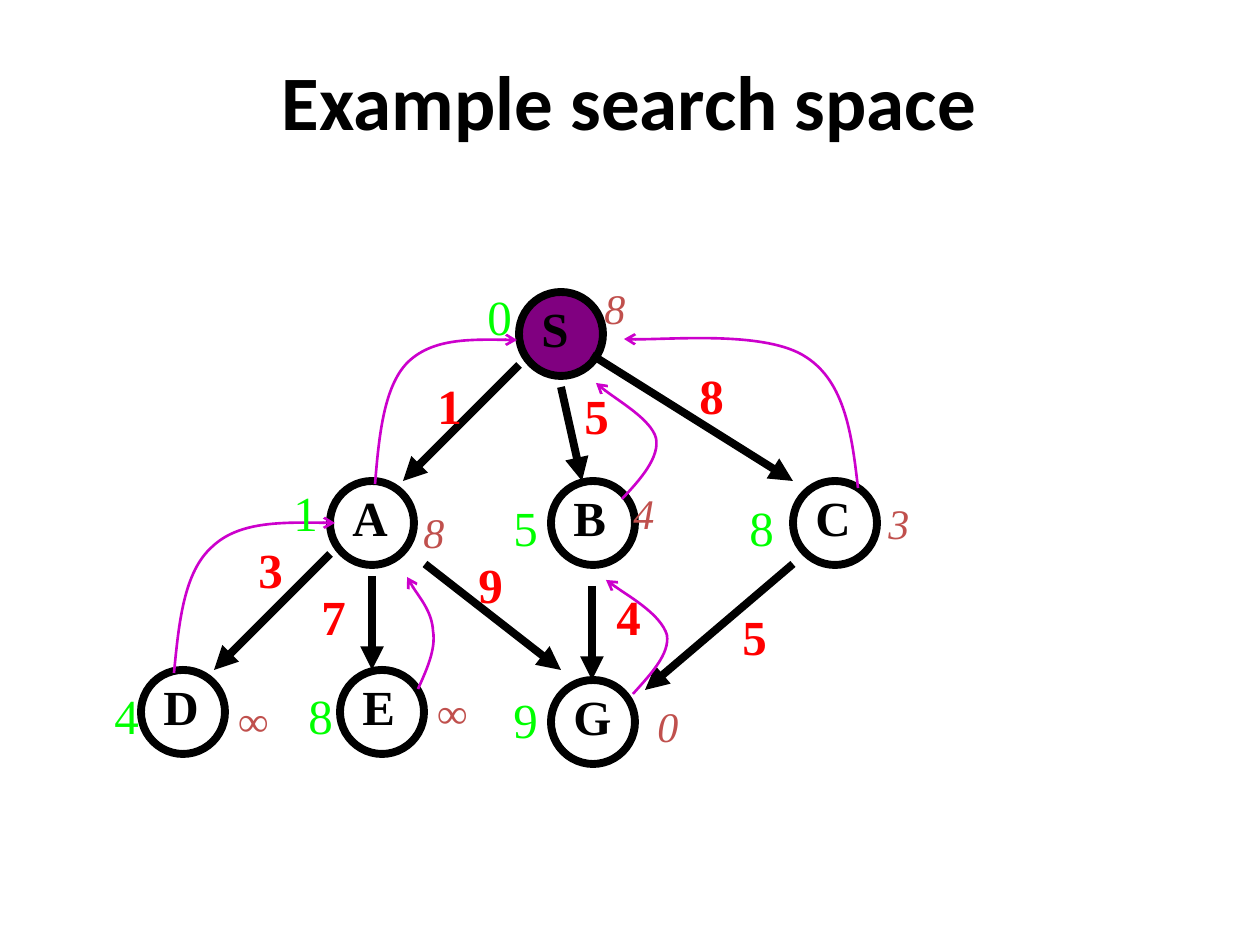
from dataclasses import dataclass

from lxml import etree
from pptx import Presentation
from pptx.dml.color import RGBColor
from pptx.enum.shapes import MSO_CONNECTOR, MSO_SHAPE
from pptx.enum.text import MSO_ANCHOR, MSO_AUTO_SIZE, PP_ALIGN
from pptx.oxml.ns import qn
from pptx.util import Emu, Pt

ELLIPSE, STRAIGHT = MSO_SHAPE.OVAL, MSO_CONNECTOR.STRAIGHT
MIDDLE, CENTER = MSO_ANCHOR.MIDDLE, PP_ALIGN.CENTER
GROW = MSO_AUTO_SIZE.SHAPE_TO_FIT_TEXT
PX_PER_INCH = 126
NODE = 84


@dataclass(frozen=True)
class TextStyle:
    size: int
    color: str
    bold: bool = False
    italic: bool = False
    font: str = "Times New Roman"


@dataclass(frozen=True)
class Theme:
    title = TextStyle(44, "000000", bold=True, font="Calibri")
    node = TextStyle(28, "000000", bold=True)
    edge_cost = TextStyle(28, "FF0000", bold=True)
    path_cost = TextStyle(28, "00FF00")
    heuristic = TextStyle(24, "C0504D", italic=True)
    ink = "000000"
    start_fill = "800080"
    back_pointer = "CC00CC"
    thick = 4.5
    thin = 1.5


THEME = Theme()

# letter, position, letter box width, path cost and its offset, heuristic and its offset
NODES = [
    ("S", (419, 22), 53, "0", (-44, -12), "8", (73, -16)),
    ("A", (230, 211), 60, "1", (-49, -5), "8", (81, 19)),
    ("B", (451, 211), 58, "5", (-50, 10), "4", (70, 0)),
    ("C", (693, 211), 60, "8", (-56, 10), "3", (83, 10)),
    ("D", (41, 400), 60, "4", (-39, 9), "∞", (85, 18)),
    ("E", (240, 400), 58, "8", (-44, 9), "∞", (85, 10)),
    ("G", (451, 410), 63, "9", (-50, 3), "0", (94, 14)),
]

# from, to, cost, cost position
EDGES = [
    ((419, 95), (303, 211), "1", (325, 99)),
    ((461, 117), (482, 211), "5", (472, 109)),
    ((492, 85), (693, 211), "8", (587, 89)),
    ((230, 284), (114, 400), "3", (146, 263)),
    ((272, 306), (272, 400), "7", (209, 310)),
    ((325, 294), (461, 400), "9", (366, 278)),
    ((492, 316), (492, 410), "4", (504, 310)),
    ((693, 294), (545, 420), "5", (630, 330)),
]

# start point, then two cubic Bézier segments of three points each
BACK_POINTERS = [
    [(275, 214), (279, 165), (284, 117), (307, 93), (331, 69), (374, 69), (417, 70)],
    [(74, 403), (79, 352), (84, 302), (112, 277), (138, 252), (186, 252), (235, 253)],
    [(318, 419), (327, 399), (336, 379), (333, 361), (332, 342), (311, 316), (307, 307)],
    [(533, 424), (551, 404), (570, 384), (567, 365), (561, 345), (516, 318), (506, 310)],
    [(522, 229), (541, 209), (560, 187), (556, 168), (551, 150), (506, 123), (496, 113)],
    [(758, 218), (752, 165), (745, 112), (706, 87), (667, 61), (555, 71), (524, 69)],
]


def px(*lengths):
    return [Emu(round(v * 914400 / PX_PER_INCH)) for v in lengths]


def shift(origin, offset):
    return origin[0] + offset[0], origin[1] + offset[1]


def style_text(p, style):
    font = p.font
    font.name, font.size = style.font, Pt(style.size)
    font.bold, font.italic = style.bold, style.italic
    font.color.rgb = RGBColor.from_string(style.color)


def style_line(line, color, width, arrow=None):
    line.color.rgb = RGBColor.from_string(color)
    line.width = Pt(width)
    if arrow:
        etree.SubElement(line._get_or_add_ln(), qn("a:tailEnd"), type=arrow)


def add_label(s, text, at, size, style):
    tf = s.shapes.add_textbox(*px(*at, *size)).text_frame
    tf.word_wrap = False
    tf.auto_size = GROW
    tf.text = text
    style_text(tf.paragraphs[0], style)


def add_node(s, at, letter, width):
    sp = s.shapes.add_shape(ELLIPSE, *px(*at, NODE, NODE))
    sp.shadow.inherit = False
    if letter == "S":
        sp.fill.solid()
        sp.fill.fore_color.rgb = RGBColor.from_string(THEME.start_fill)
    else:
        sp.fill.background()
    style_line(sp.line, THEME.ink, THEME.thick)
    add_label(s, letter, shift(at, (10, 0)), (width, 72), THEME.node)


def add_edge(s, start, end):
    c = s.shapes.add_connector(STRAIGHT, *px(*start, *end))
    style_line(c.line, THEME.ink, THEME.thick, "triangle")
    etree.SubElement(c._element.spPr, qn("a:effectLst"))


def add_back_pointer(s, points):
    """Draw a curved arrow; each three points after the first make one Bézier segment."""
    start, *rest = [px(*point) for point in points]
    builder = s.shapes.build_freeform(*start)
    builder.add_line_segments(rest, close=False)
    sp = builder.convert_to_shape()
    segments = list(sp._element.iter(qn("a:lnTo")))
    for i in range(0, len(segments), 3):
        curve = etree.Element(qn("a:cubicBezTo"))
        segments[i].addprevious(curve)
        for segment in segments[i:i + 3]:
            curve.append(segment[0])
            segment.getparent().remove(segment)
    sp.shadow.inherit = False
    sp.fill.background()
    style_line(sp.line, THEME.back_pointer, THEME.thin, "arrow")


def add_title(s, text, box):
    sp = s.shapes.title
    sp.left, sp.top, sp.width, sp.height = px(*box)
    tf = sp.text_frame
    tf.text = text
    tf.vertical_anchor = MIDDLE
    p = tf.paragraphs[0]
    p.alignment = CENTER
    style_text(p, THEME.title)


def add_search_graph(s, origin):
    for letter, at, width, *_ in NODES:
        add_node(s, shift(origin, at), letter, width)
    for start, end, *_ in EDGES:
        add_edge(s, shift(origin, start), shift(origin, end))
    for *_, cost, at in EDGES:
        add_label(s, cost, shift(origin, at), (50, 72), THEME.edge_cost)
    for points in BACK_POINTERS:
        add_back_pointer(s, [shift(origin, point) for point in points])
    for _, at, _, cost, cost_offset, estimate, estimate_offset in NODES:
        corner = shift(origin, at)
        width = 55 if estimate == "∞" else 47
        add_label(s, estimate, shift(corner, estimate_offset), (width, 63), THEME.heuristic)
        add_label(s, cost, shift(corner, cost_offset), (50, 72), THEME.path_cost)


def main():
    prs = Presentation()
    prs.slide_width, prs.slide_height = px(1260, 945)
    s = prs.slides.add_slide(prs.slide_layouts[5])
    add_title(s, "Example search space", (94, 21, 1071, 158))
    add_search_graph(s, (100, 270))
    prs.save("out.pptx")


if __name__ == "__main__":
    main()
